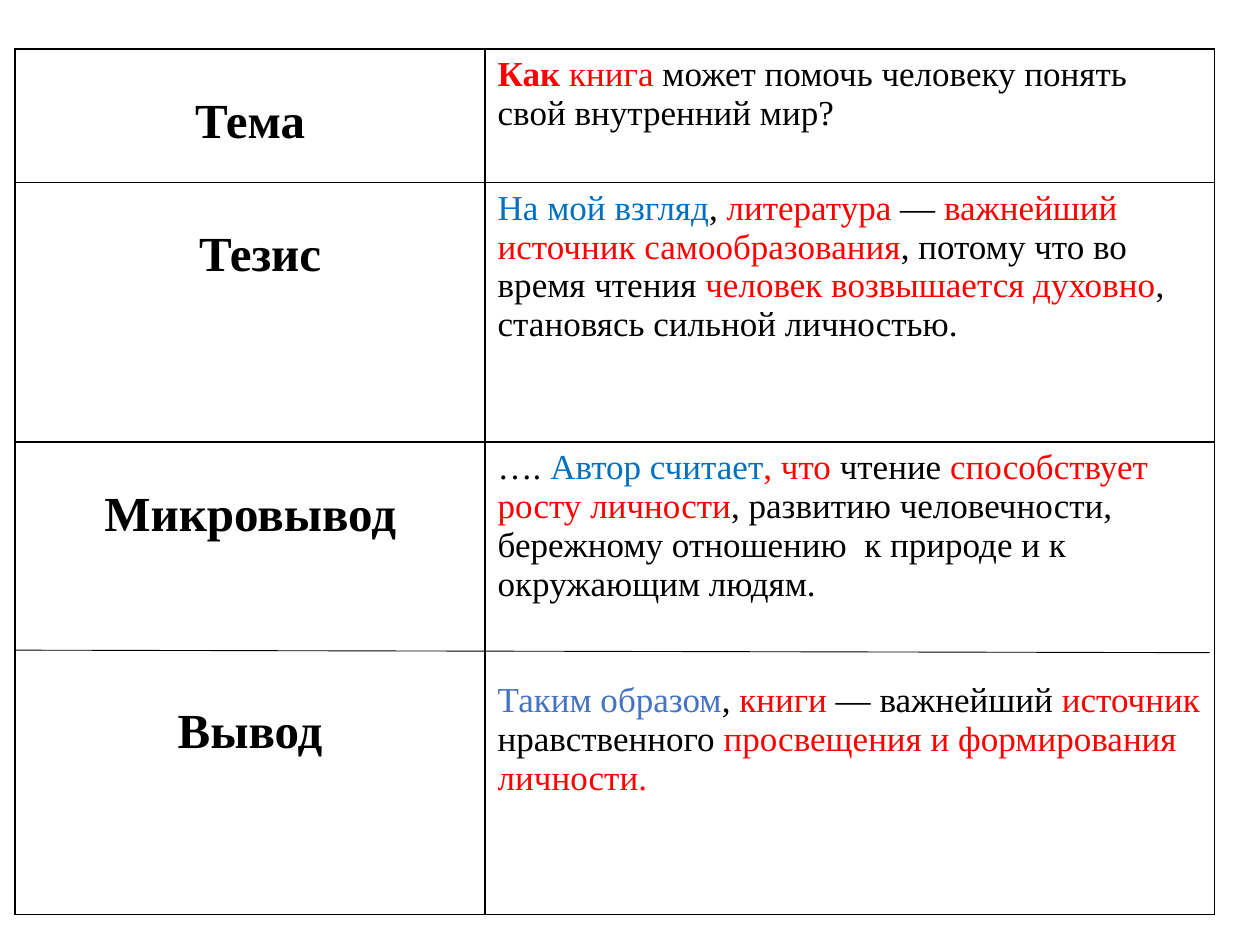
from dataclasses import dataclass

from lxml import etree
from pptx import Presentation
from pptx.dml.color import RGBColor
from pptx.enum.shapes import MSO_CONNECTOR
from pptx.enum.text import PP_ALIGN
from pptx.oxml.ns import qn
from pptx.util import Inches, Pt

LEFT, CENTER = PP_ALIGN.LEFT, PP_ALIGN.CENTER
STRAIGHT = MSO_CONNECTOR.STRAIGHT
BLANK_LAYOUT = 6


@dataclass(frozen=True)
class Theme:
    font: str = "Times New Roman"
    black: str = "000000"
    red: str = "FF0000"
    blue: str = "0070C0"
    soft_blue: str = "4472C4"
    label_size: int = 28
    body_size: int = 20
    border: float = 1
    divider: float = 0.5


theme = Theme()
BLACK, RED, BLUE = theme.black, theme.red, theme.blue


def write_paragraph(para, spans, size, bold=False, align=LEFT, before=0):
    """Fill para with (text, colour[, bold]) spans."""
    para.alignment = align
    if before:
        para.space_before = Pt(before)
    for text, colour, *own_bold in spans:
        span = para.add_run()
        span.text = text
        span.font.name = theme.font
        span.font.size = Pt(size)
        span.font.bold = own_bold[0] if own_bold else bold
        span.font.color.rgb = RGBColor.from_string(colour)


def format_cell(cell):
    """Give a cell plain black borders and no fill."""
    properties = cell._tc.get_or_add_tcPr()
    for side in ("a:lnL", "a:lnR", "a:lnT", "a:lnB"):
        line = etree.SubElement(properties, qn(side), w=str(Pt(theme.border)))
        fill = etree.SubElement(line, qn("a:solidFill"))
        etree.SubElement(fill, qn("a:srgbClr"), val=BLACK)
    cell.fill.background()


deck = Presentation()
deck.slide_width, deck.slide_height = Inches(10), Inches(7.5)
page = deck.slides.add_slide(deck.slide_layouts[BLANK_LAYOUT])

# Each row: height, labels, body paragraphs
rows = [
    (1.06, ["Тема"], [[
        ("Как ", RED, True), ("книга", RED),
        (" может помочь человеку понять свой внутренний мир?", BLACK),
    ]]),
    (2.06, ["Тезис"], [[
        ("На мой взгляд", BLUE), (", ", BLACK), ("литература", RED),
        (" — ", BLACK), ("важнейший источник самообразования", RED),
        (", потому что во время чтения ", BLACK),
        ("человек возвышается духовно", RED),
        (", становясь сильной личностью.", BLACK),
    ]]),
    (3.75, ["Микровывод", "Вывод"], [[
        ("…. ", BLACK), ("Автор считает", BLUE), (", что ", RED),
        ("чтение ", BLACK), ("способствует росту личности", RED),
        (", развитию человечности, бережному отношению  к природе "
         "и к окружающим людям.", BLACK),
    ], [
        ("Таким образом", theme.soft_blue), (", ", BLACK), ("книги", RED),
        (" — важнейший ", BLACK), ("источник", RED),
        (" нравственного ", BLACK),
        ("просвещения и формирования личности.", RED),
    ]]),
]
columns = [3.73, 5.79]
table_left, table_top = 0.12, 0.39
label_margin = 0.36
thesis_indent = 1.46
label_gap, body_gap = 93, 44.3

frame = page.shapes.add_table(
    len(rows), len(columns), Inches(table_left), Inches(table_top),
    Inches(sum(columns)), Inches(sum(height for height, *_ in rows)))
table = frame.table
table.first_row = table.horz_banding = False
for column, width in zip(table.columns, columns):
    column.width = Inches(width)

for index, (height, labels, bodies) in enumerate(rows):
    table.rows[index].height = Inches(height)
    label_cell, body_cell = table.cell(index, 0), table.cell(index, 1)
    format_cell(label_cell)
    format_cell(body_cell)
    label_cell.margin_top = Inches(label_margin)
    label_align = CENTER
    if labels == ["Тезис"]:
        label_align = LEFT
        label_cell.margin_left = Inches(thesis_indent)

    for order, (label, body) in enumerate(zip(labels, bodies)):
        label_text, body_text = label_cell.text_frame, body_cell.text_frame
        label_para = label_text.add_paragraph() if order else label_text.paragraphs[0]
        body_para = body_text.add_paragraph() if order else body_text.paragraphs[0]
        write_paragraph(label_para, [(label, BLACK)], theme.label_size, bold=True,
                        align=label_align, before=label_gap * order)
        write_paragraph(body_para, body, theme.body_size, before=body_gap * order)

# Divider between the two conclusions in the last row
divider = page.shapes.add_connector(
    STRAIGHT, Inches(table_left), Inches(5.16), Inches(9.6), Inches(5.18))
divider.line.color.rgb = RGBColor.from_string(BLACK)
divider.line.width = Pt(theme.divider)
etree.SubElement(divider._element.spPr, qn("a:effectLst"))

deck.save("out.pptx")
